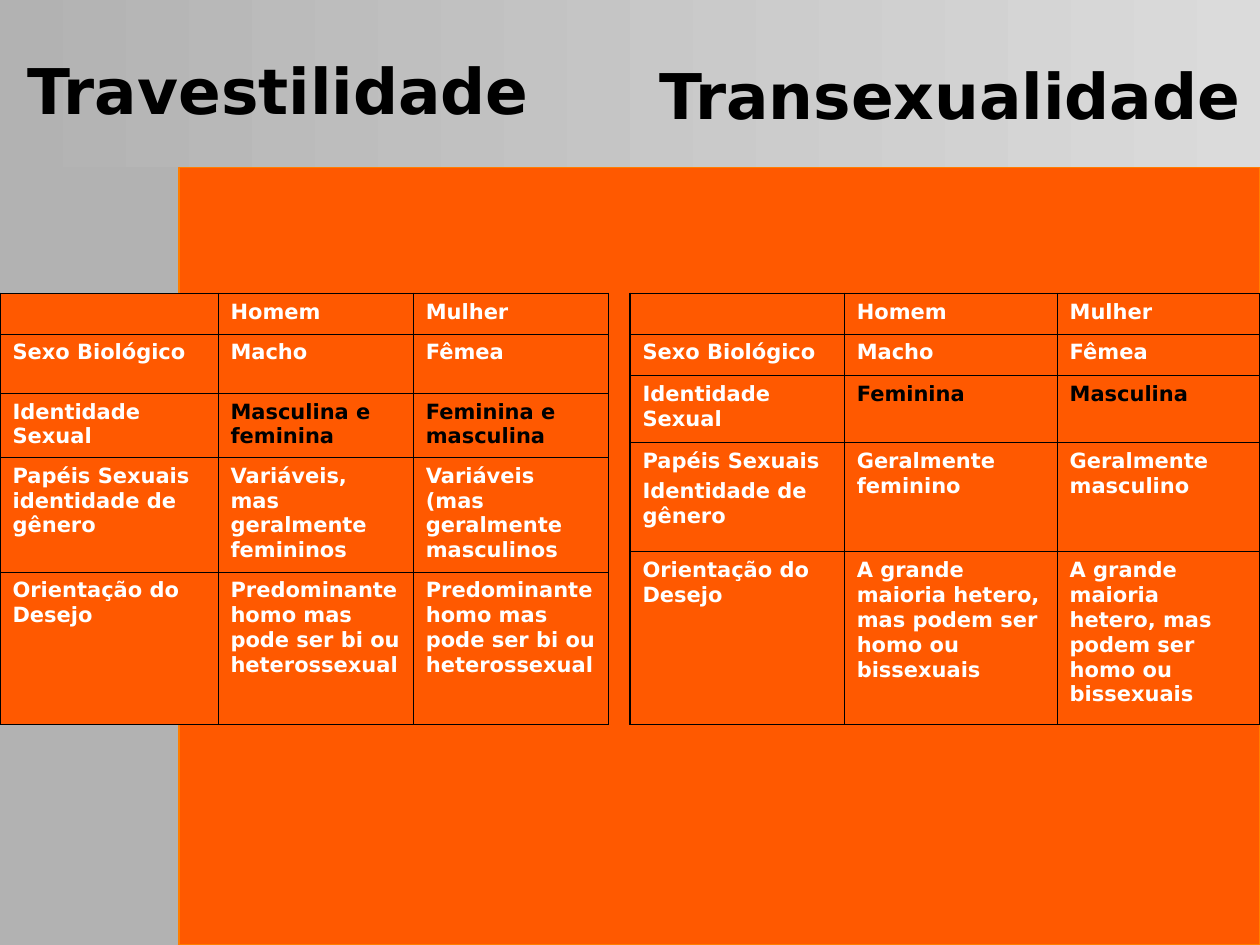
from dataclasses import dataclass

from lxml import etree
from pptx import Presentation
from pptx.dml.color import RGBColor
from pptx.enum.shapes import MSO_SHAPE
from pptx.enum.text import MSO_ANCHOR, PP_ALIGN
from pptx.oxml.ns import qn
from pptx.util import Inches, Pt

RECTANGLE = MSO_SHAPE.RECTANGLE
MIDDLE = MSO_ANCHOR.MIDDLE
CENTER = PP_ALIGN.CENTER


@dataclass(frozen=True)
class Theme:
    """Colours, font and sizes shared by the slide."""
    black: RGBColor = RGBColor(0, 0, 0)
    white: RGBColor = RGBColor(255, 255, 255)
    gray: RGBColor = RGBColor(0xB2, 0xB2, 0xB2)
    light: RGBColor = RGBColor(0xDB, 0xDB, 0xDB)
    orange: RGBColor = RGBColor(0xFF, 0x59, 0x00)
    edge: RGBColor = RGBColor(0xFF, 0x7D, 0x00)
    font: str = "DejaVu Sans"
    title: Pt = Pt(36)
    body: Pt = Pt(12)
    thin: Pt = Pt(0.45)
    thick: Pt = Pt(1.08)


THEME = Theme()
IDENTITY_ROW = 2
HEADER = ["", "Homem", "Mulher"]
SEX = ["Sexo Biológico", "Macho", "Fêmea"]
TRAVESTILITY_DESIRE = "Predominante homo mas pode ser bi ou heterossexual"
TRANSEXUALITY_DESIRE = "A grande maioria hetero, mas podem ser homo ou bissexuais"

TRAVESTILITY_ROWS = [
    HEADER,
    SEX,
    ["Identidade Sexual", "Masculina e feminina", "Feminina e masculina"],
    ["Papéis Sexuais identidade de gênero",
     "Variáveis, mas geralmente femininos",
     "Variáveis (mas geralmente masculinos"],
    ["Orientação do Desejo", TRAVESTILITY_DESIRE, TRAVESTILITY_DESIRE],
]
TRANSEXUALITY_ROWS = [
    HEADER,
    SEX,
    ["Identidade Sexual", "Feminina", "Masculina"],
    ["Papéis Sexuais\nIdentidade de gênero",
     "Geralmente feminino", "Geralmente masculino"],
    ["Orientação do Desejo", TRANSEXUALITY_DESIRE, TRANSEXUALITY_DESIRE],
]


def style_font(font, size, color):
    """Apply the bold slide font."""
    font.name = THEME.font
    font.size = size
    font.bold = True
    font.color.rgb = color


def add_panel(page, box, fill=None, line=None):
    """Place a background rectangle, with a gradient when no fill is given."""
    panel = page.shapes.add_shape(RECTANGLE, *map(Inches, box))
    panel.shadow.inherit = False
    if fill is None:
        panel.fill.gradient()
        panel.fill.gradient_angle = 180
        for stop, color in zip(panel.fill.gradient_stops, (THEME.light, THEME.gray)):
            stop.color.rgb = color
    else:
        panel.fill.solid()
        panel.fill.fore_color.rgb = fill
    if line is None:
        panel.line.fill.background()
    else:
        panel.line.color.rgb = line
        panel.line.width = Pt(0.75)


def add_background(page):
    """Place the gradient, the gray side band and the orange field."""
    add_panel(page, (0, 0, 10, 7.5))
    add_panel(page, (0, 1.33, 1.42, 6.17), THEME.gray, THEME.gray)
    add_panel(page, (1.42, 1.33, 8.58, 6.17), THEME.orange, THEME.edge)


def add_title(page, box, text):
    """Place a centred column title."""
    frame = page.shapes.add_textbox(*map(Inches, box)).text_frame
    frame.word_wrap = True
    frame.vertical_anchor = MIDDLE
    para = frame.paragraphs[0]
    para.text = text
    para.alignment = CENTER
    style_font(para.font, THEME.title, THEME.black)


def add_borders(cell, outer_sides):
    """Draw the cell borders, thicker on the table outline."""
    properties = cell._tc.get_or_add_tcPr()
    for side in "LRTB":
        width = THEME.thick if side in outer_sides else THEME.thin
        line = etree.SubElement(properties, qn(f"a:ln{side}"), w=str(int(width)))
        fill = etree.SubElement(line, qn("a:solidFill"))
        etree.SubElement(fill, qn("a:srgbClr"), val=str(THEME.black))


def fill_cell(cell, text, color):
    """Write the cell text on an orange ground."""
    cell.fill.solid()
    cell.fill.fore_color.rgb = THEME.orange
    cell.text = text
    for index, para in enumerate(cell.text_frame.paragraphs):
        para.line_spacing = 1.01
        if index:
            para.space_before = Pt(3)
        style_font(para.font, THEME.body, color)
        if not text:
            ending = para._p.get_or_add_endParaRPr()
            ending.set("sz", str(int(THEME.body.pt * 100)))


def add_comparison(page, left, top, widths, heights, rows):
    """Place one comparison table sized by its columns and rows."""
    box = (left, top, sum(widths), sum(heights))
    table = page.shapes.add_table(len(rows), len(widths), *map(Inches, box)).table
    for column, width in zip(table.columns, widths):
        column.width = Inches(width)
    for row, height in zip(table.rows, heights):
        row.height = Inches(height)
    last_row, last_column = len(rows) - 1, len(widths) - 1
    for r, texts in enumerate(rows):
        for c, text in enumerate(texts):
            cell = table.cell(r, c)
            outline = {"L": c == 0, "R": c == last_column,
                       "T": r == 0, "B": r == last_row}
            add_borders(cell, [side for side, outer in outline.items() if outer])
            emphasized = r == IDENTITY_ROW and c > 0
            fill_cell(cell, text, THEME.black if emphasized else THEME.white)


def main():
    """Build and save the slide."""
    deck = Presentation()
    deck.slide_width, deck.slide_height = Inches(10), Inches(7.5)
    page = deck.slides.add_slide(deck.slide_layouts[6])
    add_background(page)
    add_title(page, (5.08, 0.33, 4.92, 0.83), "Transexualidade")
    add_comparison(page, 5, 2.33, (1.7, 1.69, 1.61),
                   (0.32, 0.33, 0.53, 0.87, 1.37), TRANSEXUALITY_ROWS)
    add_title(page, (0, 0.25, 4.42, 0.92), "Travestilidade")
    add_comparison(page, 0, 2.33, (1.73, 1.55, 1.55),
                   (0.32, 0.47, 0.51, 0.91, 1.21), TRAVESTILITY_ROWS)
    deck.save("out.pptx")


if __name__ == "__main__":
    main()
